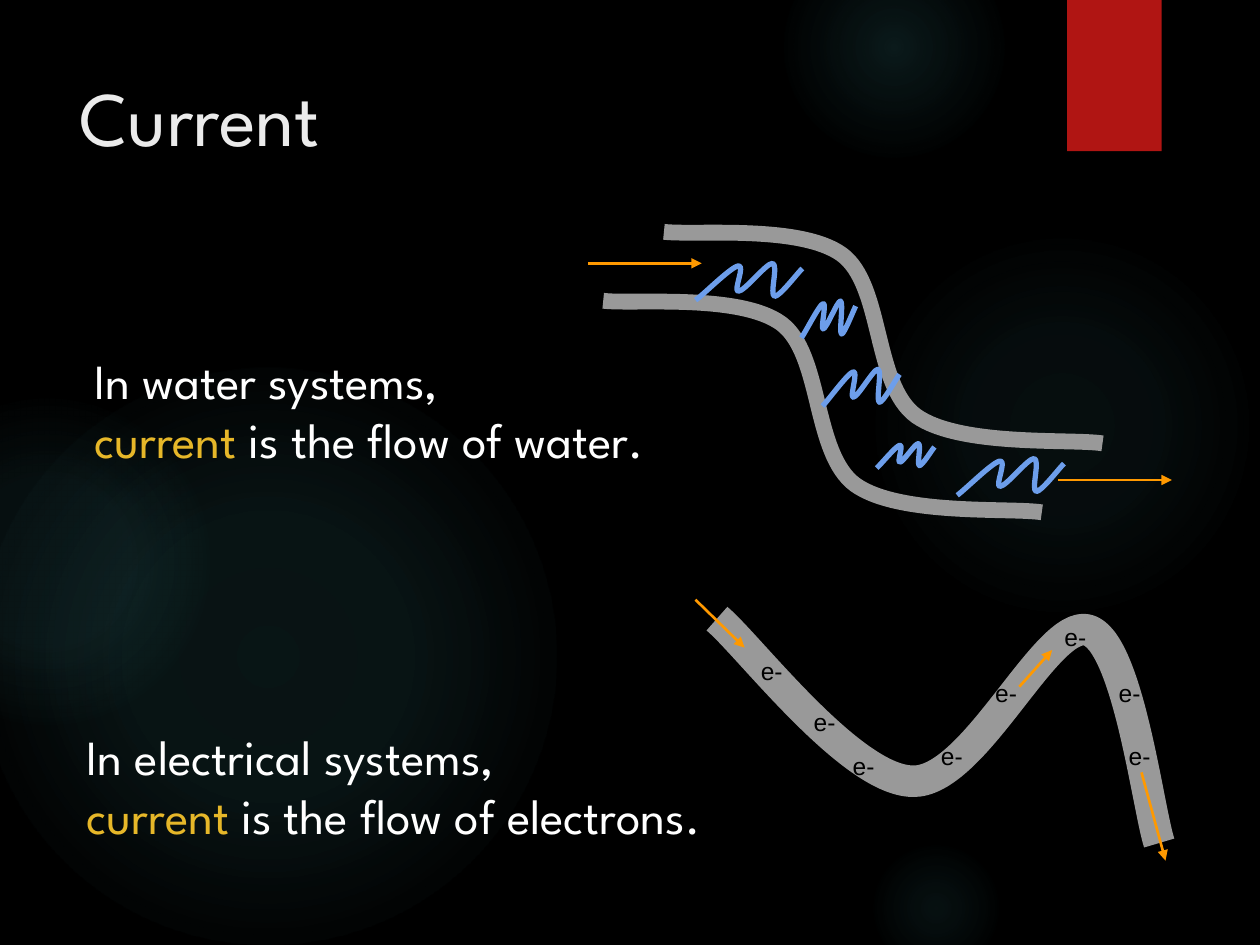
"""Build the slide that compares water current with electric current."""
from itertools import chain
from lxml import etree
from pptx import Presentation
from pptx import util as u
from pptx.dml.color import RGBColor
from pptx.enum import shapes, text
from pptx.oxml import ns

BLACK = RGBColor(0, 0, 0)
WHITE = RGBColor(255, 255, 255)
PALE = RGBColor(0xEB, 0xEB, 0xEB)
GOLD = RGBColor(0xE6, 0xB7, 0x29)
RED = RGBColor(0xB0, 0x15, 0x13)
GREY = RGBColor(0x99, 0x99, 0x99)
BLUE = RGBColor(0x6D, 0x9E, 0xEB)
AMBER = RGBColor(0xFF, 0x99, 0)
TEAL = RGBColor(0x50, 0xB9, 0xC1)
SPARTAN = "League Spartan"

GLOWS = [
    (496, 131.8, 222, ((0, 7), (36, 6), (69, 0))),
    (448, -36, 126, ((0, 14), (36, 7), (73, 0))),
    (496, 480, 78, ((0, 9), (36, 5), (66, 0))),
    (-12, 210, 330, ((0, 11), (36, 10), (75, 0))),
    (-66, 228, 186, ((0, 8), (36, 8), (72, 0))),
]
BAR = (609.8, 0, 54, 86.4)
TITLE = ("Current", (38.2, 36, 555.8, 110.2))
NOTES = [
    ("In water systems, ", "is the flow of water.", (46.8, 193, 398.9, 90)),
    ("In electrical systems, ", "is the flow of electrons.",
     (42.5, 408.2, 473, 87.8)),
]
WIRE = [(662.4, 481.7), (655.9, 461.5), (644.4, 365.8), (621.4, 360),
        (597.6, 354.2), (556.6, 447.8), (521.3, 446.4),
        (486, 445.7), (427.7, 368.6), (409.7, 353.5)]
PIPE = [(379.4, 132.5), (396.7, 134.6), (457.2, 128.2), (481, 145.4),
        (504.7, 162.7), (499, 219.6), (523.4, 237.6),
        (548.6, 255.6), (612.7, 250.6), (630, 253.4)]
SHIFTS = [(0, 0), (-34.7, 39.4)]
WAVE = [(0, 1), (.07, .86), (.33, .1), (.4, .07),
        (.47, .03), (.35, .76), (.4, .76),
        (.46, .76), (.66, 0), (.72, 0),
        (.78, .03), (.69, .86), (.74, .9),
        (.79, .9), (.95, .28), (1, .14)]
RIPPLES = [(470, 211, 44, 21), (458, 172, 31, 21), (397.5, 150.5, 61, 21),
           (501, 253.5, 33, 14), (547, 262, 61, 21)]
CHARGES = [(427.7, 367.9), (457.9, 396.7), (480.2, 421.9), (530.6, 416.2),
           (561.6, 380.2), (601.2, 348.5), (632.2, 380.2), (637.9, 416.2)]
WIRE_FLOW = [(397.4, 342.7, 425.5, 370.1), (582.5, 392.4, 601.2, 371.5),
             (652.3, 441.4, 666, 491.8)]
PIPE_FLOW = [(604.8, 274.3, 669.6, 274.3), (336.2, 150.5, 401, 150.5)]


def pts(nums):
    return [u.Pt(n) for n in nums]


def put(item, vals):
    for name, val in vals.items():
        setattr(item, name, val)


def sub(root, tag, **vals):
    return etree.SubElement(root, ns.qn(tag), **vals)


def paint(fill, hue):
    fill.solid()
    fill.fore_color.rgb = hue


def plain(kit, kind, box):
    shape = kit.add_shape(kind, *pts(box))
    shape.shadow.inherit = False
    shape.line.fill.background()
    return shape


def glow(kit, left, top, size, stops):
    shape = plain(kit, shapes.MSO_SHAPE.OVAL, (left, top, size, size))
    shape.fill.background()
    old = shape._element.spPr.find(ns.qn("a:noFill"))
    grad = etree.Element(ns.qn("a:gradFill"), rotWithShape="1")
    row = sub(grad, "a:gsLst")
    for pos, alpha in stops:
        stop = sub(row, "a:gs", pos=str(pos * 1000))
        hue = sub(stop, "a:srgbClr", val=str(TEAL))
        sub(hue, "a:alpha", val=str(alpha * 1000))
    ring = sub(grad, "a:path", **{"path": "circle"})
    sub(ring, "a:fillToRect", **dict.fromkeys("ltrb", "50000"))
    old.getparent().replace(old, grad)


def curve(kit, dots, hue, width):
    first, *rest = [pts(dot) for dot in dots]
    pen = kit.build_freeform(*first)
    pen.add_line_segments(rest, close=False)
    shape = pen.convert_to_shape()
    shape.shadow.inherit = False
    shape.fill.background()
    paint(shape.line.fill, hue)
    shape.line.width = u.Pt(width)
    steps = list(shape._element.iter(ns.qn("a:lnTo")))
    track = steps[0].getparent()
    for i in range(0, len(steps), 3):
        bend = sub(track, "a:cubicBezTo")
        for step in steps[i:i + 3]:
            bend.append(step[0])
            track.remove(step)


def arrow(kit, ends):
    line = kit.add_connector(shapes.MSO_CONNECTOR.STRAIGHT, *pts(ends))
    paint(line.line.fill, AMBER)
    line.line.width = u.Pt(1.5)
    sub(line.line._get_or_add_ln(), "a:tailEnd", type="triangle")
    sub(line._element.spPr, "a:effectLst")


def write(para, words, hue, size, face=SPARTAN):
    run = para.add_run()
    run.text = words
    put(run.font, {"name": face, "size": u.Pt(size)})
    run.font.color.rgb = hue


def label(kit, box):
    frame = kit.add_textbox(*pts(box)).text_frame
    edges = ("left", "top", "right", "bottom")
    put(frame, {f"margin_{edge}": u.Pt(7.2) for edge in edges})
    frame.word_wrap = True
    return frame.paragraphs[0]


def main():
    deck = Presentation()
    put(deck, {"slide_width": u.Pt(720), "slide_height": u.Pt(540)})
    slide = deck.slides.add_slide(deck.slide_layouts[5])
    paint(slide.background.fill, BLACK)
    kit = slide.shapes

    for spot in GLOWS:
        glow(kit, *spot)
    paint(plain(kit, shapes.MSO_SHAPE.RECTANGLE, BAR).fill, RED)

    words, box = TITLE
    head = kit.title
    put(head, dict(zip(("left", "top", "width", "height"), pts(box))))
    put(head.text_frame, {"vertical_anchor": text.MSO_ANCHOR.TOP,
                          "auto_size": text.MSO_AUTO_SIZE.NONE})
    para = head.text_frame.paragraphs[0]
    para.alignment = text.PP_ALIGN.LEFT
    write(para, words, PALE, 44)

    for lead, rest, box in NOTES:
        para = label(kit, box)
        write(para, lead, WHITE, 28)
        para.add_line_break()
        write(para, "current ", GOLD, 28)
        write(para, rest, WHITE, 28)

    curve(kit, WIRE, GREY, 18)
    for spot in CHARGES:
        write(label(kit, (*spot, 31, 28.8)), "e-", BLACK, 14, "Arial")
    for dx, dy in SHIFTS:
        curve(kit, [(x + dx, y + dy) for x, y in PIPE], GREY, 9)
    for left, top, wide, high in RIPPLES:
        dots = [(left + x * wide, top + y * high) for x, y in WAVE]
        curve(kit, dots, BLUE, 3)
    for ends in chain(WIRE_FLOW, PIPE_FLOW):
        arrow(kit, ends)
    deck.save("out.pptx")


if __name__ == "__main__":
    main()
